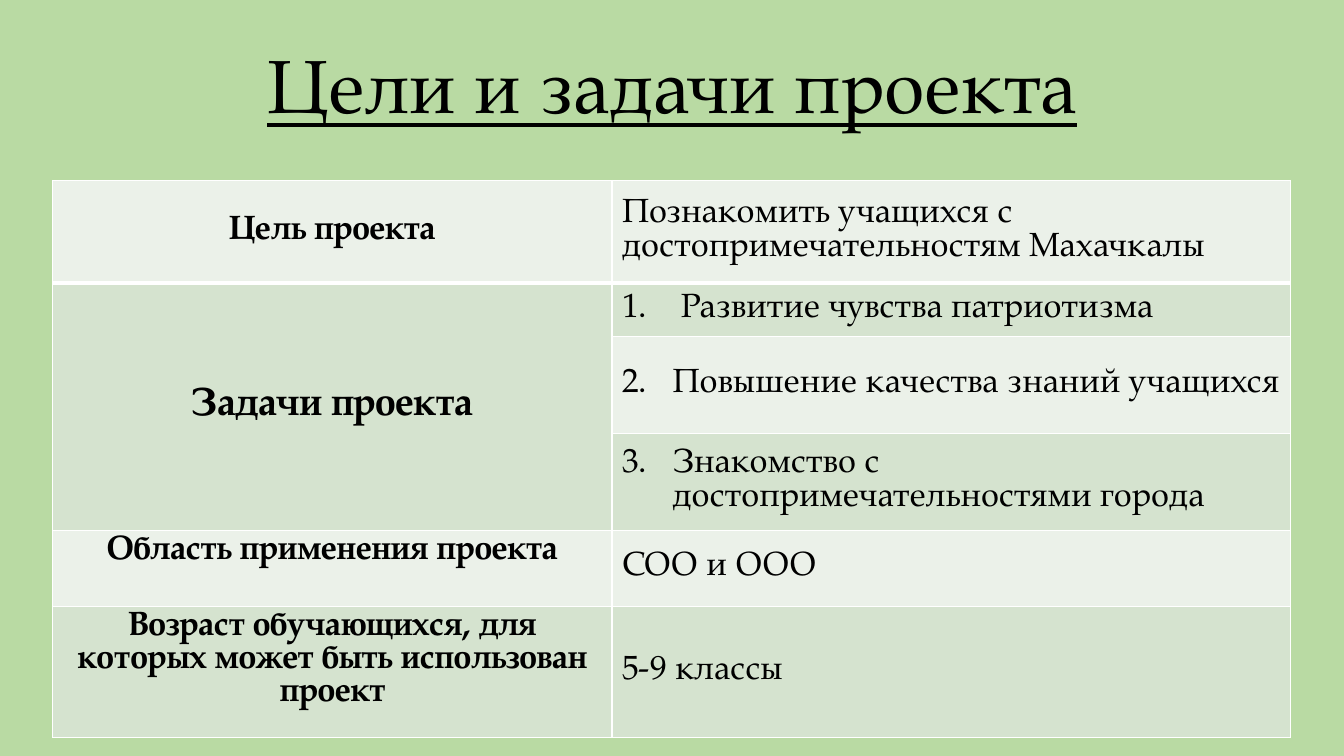
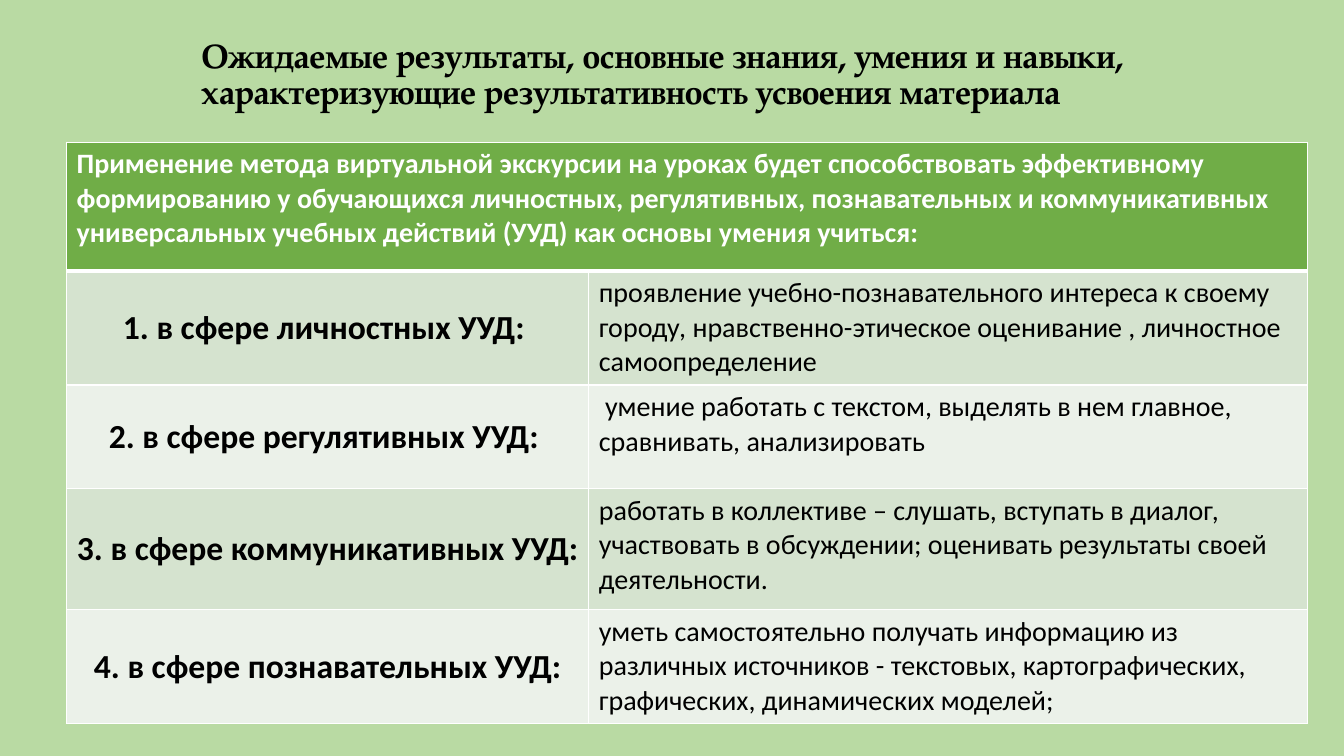
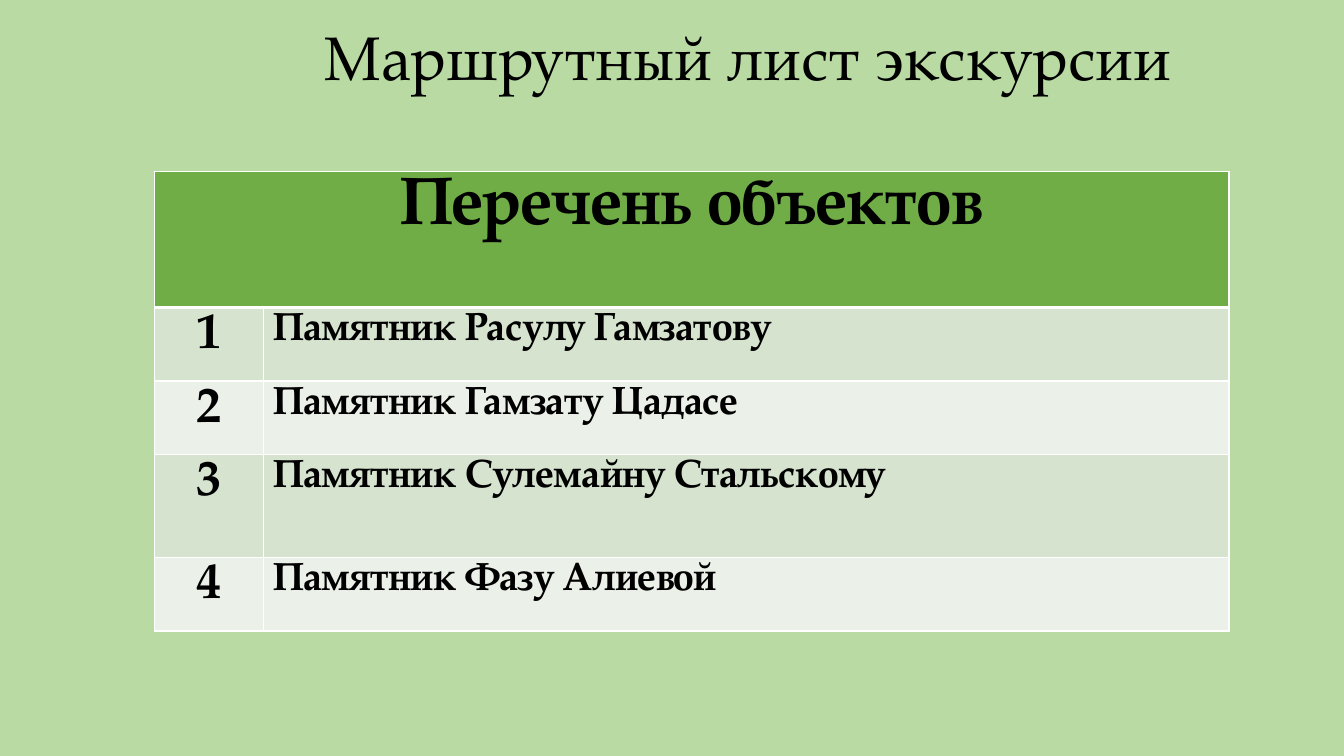
from dataclasses import dataclass, replace

from lxml.etree import SubElement
from pptx import Presentation
from pptx.dml.color import RGBColor
from pptx.enum.text import MSO_ANCHOR as Anchor, PP_ALIGN as Align
from pptx.oxml.ns import qn
from pptx.util import Inches, Pt

SERIF, SANS = "TeX Gyre Pagella", "Calibri"
BACKGROUND, HEADER = "B9DAA3", "70AD47"
DARK_BAND, LIGHT_BAND = "D5E3CF", "EBF1E9"
BLACK, WHITE = "000000", "FFFFFF"


@dataclass(frozen=True)
class TextStyle:
    """Look of one paragraph and its place in the box."""
    size: float = 24
    font: str = SERIF
    color: str = BLACK
    bold: bool = False
    underline: bool = False
    align: Align = Align.LEFT
    anchor: Anchor = Anchor.MIDDLE
    spacing: float = 1.0
    number: int = 0


TITLE = TextStyle(size=54, align=Align.CENTER, spacing=0.9)
VALUE = TextStyle()
LABEL = TextStyle(bold=True, align=Align.CENTER)
TOP_LABEL = replace(LABEL, anchor=Anchor.TOP)
SKILL_AREA = replace(LABEL, font=SANS)
SKILL = TextStyle(size=20, font=SANS, anchor=Anchor.TOP)
SKILL_HEADER = replace(SKILL, color=WHITE, bold=True)
STOP_NUMBER = replace(TOP_LABEL, size=36)
STOP = TextStyle(size=28, bold=True, anchor=Anchor.TOP)


def rgb(color):
    """Turn a hex string into a colour."""
    return RGBColor.from_string(color)


def write(frame, text, style):
    """Write one styled paragraph into a text frame."""
    paragraph = frame.paragraphs[0]
    paragraph.alignment = style.align
    paragraph.line_spacing = style.spacing
    if style.number:
        properties = paragraph._p.get_or_add_pPr()
        properties.set("marL", str(Inches(0.5)))
        properties.set("indent", str(-Inches(0.5)))
        SubElement(properties, qn("a:buFont"), typeface="+mj-lt")
        SubElement(properties, qn("a:buAutoNum"), type="arabicPeriod",
                   startAt=str(style.number))
    run = paragraph.add_run()
    run.text = text
    font = run.font
    font.name, font.size = style.font, Pt(style.size)
    font.bold, font.underline = style.bold, style.underline
    font.color.rgb = rgb(style.color)


def add_title(slide, box, text, style):
    """Place the slide title in a box."""
    frame = slide.shapes.add_textbox(*map(Inches, box)).text_frame
    frame.word_wrap = True
    frame.vertical_anchor = style.anchor
    write(frame, text, style)


def paint_cell(cell, fill, top, bottom):
    """Fill a cell and draw its white borders."""
    properties = cell._tc.get_or_add_tcPr()
    for side, width in (("L", 1), ("R", 1), ("T", top), ("B", bottom)):
        border = SubElement(properties, qn(f"a:ln{side}"), w=str(Pt(width)))
        solid = SubElement(border, qn("a:solidFill"))
        SubElement(solid, qn("a:srgbClr"), val=WHITE)
    cell.fill.solid()
    cell.fill.fore_color.rgb = rgb(fill)


def add_banded_table(slide, origin, widths, heights, rows, header_fill, merge):
    """Place a banded table; None marks a cell covered by the merge."""
    size = sum(widths), sum(heights)
    table = slide.shapes.add_table(
        len(heights), len(widths), *map(Inches, (*origin, *size))).table
    table.first_row = table.horz_banding = False
    for column, width in zip(table.columns, widths):
        column.width = Inches(width)
    for row, height in zip(table.rows, heights):
        row.height = Inches(height)
    first, last = merge
    table.cell(*first).merge(table.cell(*last))
    for r, contents in enumerate(rows):
        band = DARK_BAND if r % 2 else LIGHT_BAND
        for c, content in enumerate(contents):
            cell = table.cell(r, c)
            paint_cell(cell, band if r else header_fill,
                       3 if r == 1 else 1, 1 if r else 3)
            if content:
                text, style = content
                cell.vertical_anchor = style.anchor
                write(cell.text_frame, text, style)


def new_slide(deck):
    """Add a blank slide with the shared background."""
    slide = deck.slides.add_slide(deck.slide_layouts[6])
    slide.background.fill.solid()
    slide.background.fill.fore_color.rgb = rgb(BACKGROUND)
    return slide


def goals_slide(deck):
    """Build the slide of goals and tasks."""
    slide = new_slide(deck)
    add_title(slide, (0.92, 0.16, 11.5, 1.45), "Цели и задачи проекта",
              replace(TITLE, underline=True))
    tasks = [" Развитие чувства патриотизма",
             "Повышение качества знаний учащихся",
             "Знакомство с достопримечательностями города"]
    task_label = ("Задачи проекта", replace(LABEL, size=28))
    rows = [
        [("Цель проекта", LABEL),
         ("Познакомить учащихся с достопримечательностям Махачкалы", VALUE)],
        *[[task_label if n == 1 else None, (task, replace(VALUE, number=n))]
          for n, task in enumerate(tasks, 1)],
        [("Область применения проекта", TOP_LABEL), ("СОО и ООО", VALUE)],
        [("Возраст обучающихся, для которых может быть использован проект",
          TOP_LABEL), ("5-9 классы", VALUE)],
    ]
    add_banded_table(slide, (0.52, 1.79), (5.55, 6.73),
                     (1.02, 0.53, 0.96, 0.96, 0.76, 1.21), rows,
                     LIGHT_BAND, ((1, 0), (3, 0)))


def results_slide(deck):
    """Build the slide of expected results."""
    slide = new_slide(deck)
    add_title(slide, (1.9, 0.38, 10.33, 0.74),
              "Ожидаемые результаты, основные знания, умения и навыки, "
              "характеризующие результативность усвоения материала",
              replace(TITLE, size=24, bold=True, align=Align.LEFT))
    summary = ("Применение метода виртуальной экскурсии на уроках будет "
               "способствовать эффективному формированию у обучающихся "
               "личностных, регулятивных, познавательных и коммуникативных "
               "универсальных учебных действий (УУД) как основы умения учиться:")
    skills = [
        ("1. в сфере личностных УУД: ",
         "проявление учебно-познавательного интереса к своему городу, "
         "нравственно-этическое оценивание , личностное самоопределение"),
        ("2. в сфере регулятивных УУД: ",
         " умение работать с текстом, выделять в нем главное, "
         "сравнивать, анализировать"),
        ("3. в сфере коммуникативных УУД:",
         "работать в коллективе – слушать, вступать в диалог, участвовать "
         "в обсуждении; оценивать результаты своей деятельности."),
        ("4. в сфере познавательных УУД:",
         "уметь самостоятельно получать информацию из различных источников - "
         "текстовых, картографических, графических, динамических моделей;"),
    ]
    rows = [[(summary, SKILL_HEADER), None],
            *[[(area, SKILL_AREA), (skill, SKILL)] for area, skill in skills]]
    add_banded_table(slide, (0.66, 1.41), (5.18, 7.13),
                     (1.28, 1.13, 1.03, 1.2, 1.13), rows,
                     HEADER, ((0, 0), (0, 1)))


def route_slide(deck):
    """Build the slide of the excursion route."""
    slide = new_slide(deck)
    add_title(slide, (2.17, 0.13, 10.51, 0.95), "Маршрутный лист экскурсии",
              replace(TITLE, size=44.1))
    stops = ["Расулу Гамзатову", "Гамзату Цадасе",
             "Сулемайну Стальскому", "Фазу Алиевой"]
    rows = [[("Перечень объектов", replace(TOP_LABEL, size=48)), None],
            *[[(str(n), STOP_NUMBER), (f"Памятник {stop}", STOP)]
              for n, stop in enumerate(stops, 1)]]
    add_banded_table(slide, (1.53, 1.7), (1.08, 9.58),
                     (1.35, 0.73, 0.73, 1.02, 0.73), rows,
                     HEADER, ((0, 0), (0, 1)))


def main():
    """Build and save the deck."""
    deck = Presentation()
    deck.slide_width, deck.slide_height = Inches(13.33), Inches(7.5)
    for build in (goals_slide, results_slide, route_slide):
        build(deck)
    deck.save("out.pptx")


if __name__ == "__main__":
    main()
